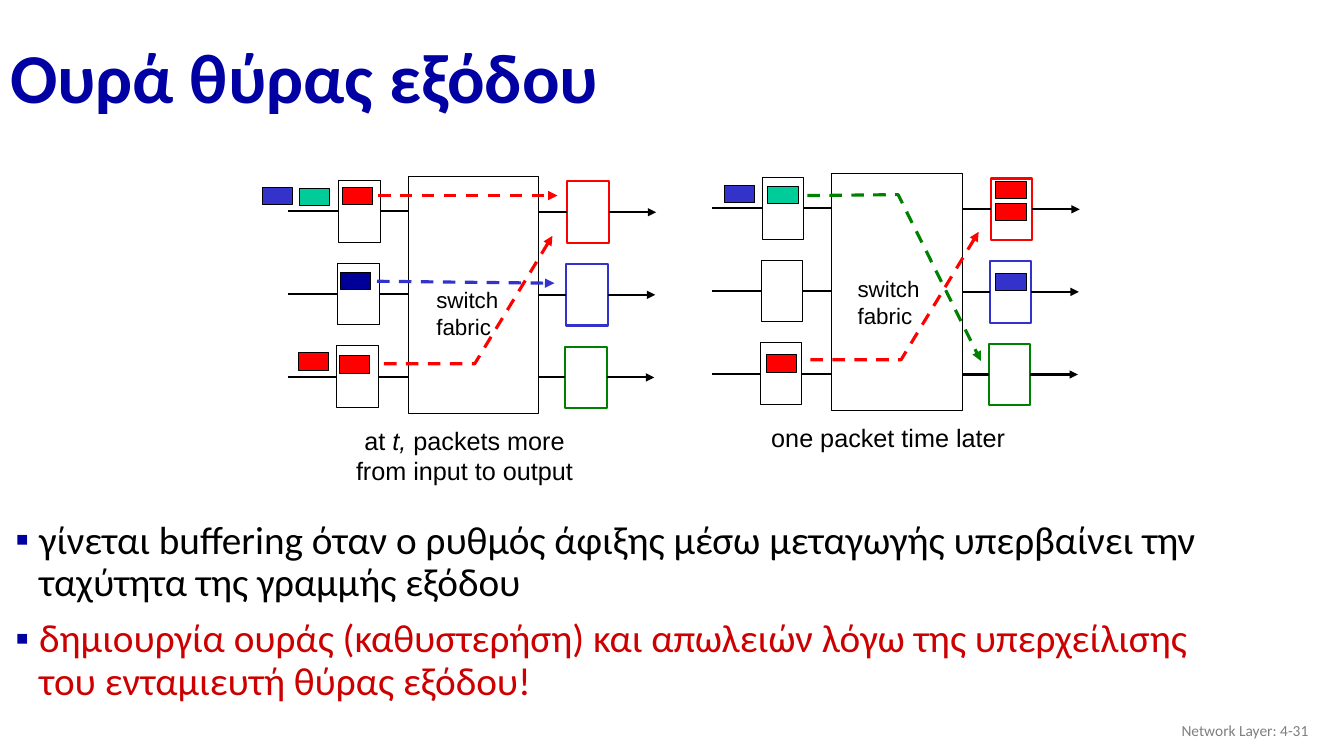
from lxml import etree
from pptx import Presentation
from pptx.dml import color as dml_color
from pptx.enum import dml, shapes, text
from pptx.oxml import ns
from pptx.util import Pt

COLORS = {
    "black": "000000", "white": "FFFFFF", "red": "FF0000", "blue": "3333CC",
    "navy": "000099", "teal": "00CC99", "green": "008000", "title": "0000A3",
    "warning": "CC0000", "gray": "7F7F7F",
}
ROW_STEP = 59
PORT_SIZE = (29.5, 44)
PACKET_SIZE = (21.6, 12.4)


def rgb(name):
    """Return the palette colour with the given name."""
    return dml_color.RGBColor.from_string(COLORS[name])


def style_font(font, size, color, name="Arial", bold=None):
    """Set the face, size and colour of a font."""
    font.name, font.size, font.bold = name, Pt(size), bold
    font.color.rgb = rgb(color)


def place(shape, left, top, width, height):
    """Move and size a shape in points."""
    shape.left, shape.top = Pt(left), Pt(top)
    shape.width, shape.height = Pt(width), Pt(height)


def add_box(slide, left, top, size, fill="white", line="black", weight=0.75):
    """Add a filled rectangle with an outline."""
    shape = slide.shapes.add_shape(
        shapes.MSO_SHAPE.RECTANGLE, Pt(left), Pt(top), Pt(size[0]), Pt(size[1]))
    shape.shadow.inherit = False
    shape.fill.solid()
    shape.fill.fore_color.rgb = rgb(fill)
    shape.line.color.rgb = rgb(line)
    shape.line.width = Pt(weight)
    return shape


def style_line(shape, color, weight, arrow=False, dashed=False):
    """Set the colour, weight, dash and arrowhead of a line."""
    shape.line.color.rgb = rgb(color)
    shape.line.width = Pt(weight)
    if dashed:
        shape.line.dash_style = dml.MSO_LINE.DASH
    if arrow:
        outline = shape.element.spPr.find(ns.qn("a:ln"))
        etree.SubElement(outline, ns.qn("a:tailEnd"), type="triangle")


def add_line(slide, start, end, color="black", weight=1.5, **options):
    """Add a straight line between two points."""
    line = slide.shapes.add_connector(
        shapes.MSO_CONNECTOR.STRAIGHT, *(Pt(value) for value in (*start, *end)))
    style_line(line, color, weight, **options)
    etree.SubElement(line.element.spPr, ns.qn("a:effectLst"))
    return line


def add_route(slide, points, color):
    """Add a dashed arrow that follows the given points."""
    if len(points) == 2:
        add_line(slide, *points, color, 2.25, arrow=True, dashed=True)
        return
    corners = [(Pt(x), Pt(y)) for x, y in points]
    builder = slide.shapes.build_freeform(*corners[0], scale=1.0)
    builder.add_line_segments(corners[1:], close=False)
    route = builder.convert_to_shape()
    route.shadow.inherit = False
    route.fill.background()
    style_line(route, color, 2.25, arrow=True, dashed=True)


def add_text(slide, box, lines, size, color="black", name="Arial",
             align=text.PP_ALIGN.LEFT, anchor=text.MSO_ANCHOR.TOP):
    """Add a text box whose lines are lists of (text, italic) runs."""
    shape = slide.shapes.add_textbox(*(Pt(value) for value in box))
    frame = shape.text_frame
    frame.word_wrap = True
    frame.vertical_anchor = anchor
    for index, runs in enumerate(lines):
        paragraph = frame.add_paragraph() if index else frame.paragraphs[0]
        paragraph.alignment = align
        style_font(paragraph.font, size, color, name)
        for words, italic in runs:
            run = paragraph.add_run()
            run.text = words
            if italic:
                run.font.italic = True


def add_ports(slide, left, top):
    """Add three input and three output ports with their links."""
    for row, color in enumerate(("red", "blue", "green")):
        y = top + 3 + row * ROW_STEP
        middle = y + PORT_SIZE[1] / 2
        input_left = left + 36 - 0.7 * row
        output_left = left + 199.2 - 0.7 * row
        input_right = input_left + PORT_SIZE[0]
        output_right = output_left + PORT_SIZE[0]
        input_port = add_box(slide, input_left, y, PORT_SIZE)
        output_port = add_box(slide, output_left, y + 0.6, PORT_SIZE,
                              line=color, weight=1.5)
        arrival = add_line(slide, (left, middle), (input_left, middle))
        arrival.end_connect(input_port, 1)
        entry = add_line(slide, (input_right, middle), (left + 85.6, middle))
        entry.begin_connect(input_port, 3)
        middle += 0.6
        leaving = add_line(slide, (left + 178.6, middle), (output_left, middle))
        leaving.end_connect(output_port, 1)
        departure = add_line(slide, (output_right, middle),
                             (output_right + 34, middle), arrow=True)
        departure.begin_connect(output_port, 3)


def add_switch(slide, left, top, packets, routes, label, caption):
    """Draw one switch with its ports, packets, routes and caption."""
    add_box(slide, left + 85.6, top, (93, 169.2))
    add_ports(slide, left, top)
    for x, y, color in packets:
        add_box(slide, left + x, top + y, PACKET_SIZE, fill=color)
    for color, points in routes:
        add_route(slide, [(left + x, top + y) for x, y in points], color)
    add_text(slide, (left + label[0], top + label[1], 66, 46),
             [[("switch", False)], [("fabric", False)]], 16)
    add_text(slide, (left + 29, top + 174, 193.7, 29 if len(caption) == 1 else 50),
             caption, 18, align=text.PP_ALIGN.CENTER)


def add_title(slide, box, words):
    """Place and format the title."""
    title = slide.shapes.title
    place(title, *box)
    frame = title.text_frame
    frame.text = words
    frame.auto_size = text.MSO_AUTO_SIZE.NONE
    frame.vertical_anchor = text.MSO_ANCHOR.MIDDLE
    paragraph = frame.paragraphs[0]
    paragraph.alignment = text.PP_ALIGN.LEFT
    paragraph.line_spacing = 0.9
    style_font(paragraph.font, 50, "title", "Calibri", True)


def add_bullets(slide, box, items):
    """Place the body list of (text, colour) items."""
    body = slide.placeholders[1]
    place(body, *box)
    frame = body.text_frame
    frame.auto_size = text.MSO_AUTO_SIZE.NONE
    for index, (words, color) in enumerate(items):
        paragraph = frame.add_paragraph() if index else frame.paragraphs[0]
        paragraph.text = words
        paragraph.line_spacing = 0.9
        paragraph.space_before = Pt(10 if index else 0)
        style_font(paragraph.font, 28, color, "Calibri")
        properties = paragraph._p.get_or_add_pPr()
        properties.set("marL", str(Pt(28)))
        properties.set("indent", str(-Pt(17)))
        bullet_color = etree.Element(ns.qn("a:buClr"))
        etree.SubElement(bullet_color, ns.qn("a:srgbClr"), val=COLORS["title"])
        bullet_font = etree.Element(ns.qn("a:buFont"), typeface="Arial")
        bullet = etree.Element(ns.qn("a:buChar"), char="▪")
        position = list(properties).index(properties.find(ns.qn("a:defRPr")))
        properties[position:position] = [bullet_color, bullet_font, bullet]


def main():
    """Build the output port queueing slide."""
    presentation = Presentation()
    presentation.slide_width, presentation.slide_height = Pt(960), Pt(540)
    slide = presentation.slides.add_slide(presentation.slide_layouts[1])
    add_title(slide, (0, 22.3, 828, 70.6), "Ουρά θύρας εξόδου")
    add_switch(
        slide, 206, 126,
        [(38.8, 7.9, "red"), (37.4, 68.4, "navy"), (36.6, 128.2, "red"),
         (7.8, 8.6, "teal"), (7.1, 126, "red"), (-18.8, 7.9, "blue")],
        [("red", [(64, 13.7), (192.2, 13.7)]),
         ("blue", [(63.3, 74.9), (190, 76.3)]),
         ("red", [(68.3, 133.9), (133.1, 133.9), (188.6, 42.5)])],
        (98.6, 74.9),
        [[("at ", False), ("t,", True), (" packets more", False)],
         [("from input to output", False)]])
    add_switch(
        slide, 508.6, 123.9,
        [(202.8, 5.7, "red"), (202.8, 21.5, "red"), (202.8, 71.2, "blue"),
         (40, 9.3, "teal"), (38.6, 129.5, "red"), (9.1, 8.6, "blue")],
        [("red", [(70.3, 133.1), (135.1, 133.1), (190.5, 41.7)]),
         ("green", [(68.1, 15.8), (132.9, 15.1), (192, 133.9)])],
        (96.9, 69.1), [[("one packet time later", False)]])
    add_bullets(slide, (-7.2, 367.9, 890.6, 138.2), [
        ("γίνεται buffering όταν ο ρυθμός άφιξης μέσω μεταγωγής υπερβαίνει την "
         "ταχύτητα της γραμμής εξόδου", "black"),
        ("δημιουργία ουράς (καθυστερήση) και απωλειών λόγω της υπερχείλισης "
         "του ενταμιευτή θύρας εξόδου!", "warning")])
    add_text(slide, (725.8, 507.6, 216, 28.8), [[("Network Layer: 4-31", False)]],
             11, "gray", "Calibri", text.PP_ALIGN.RIGHT, text.MSO_ANCHOR.MIDDLE)
    presentation.save("out.pptx")


if __name__ == "__main__":
    main()
